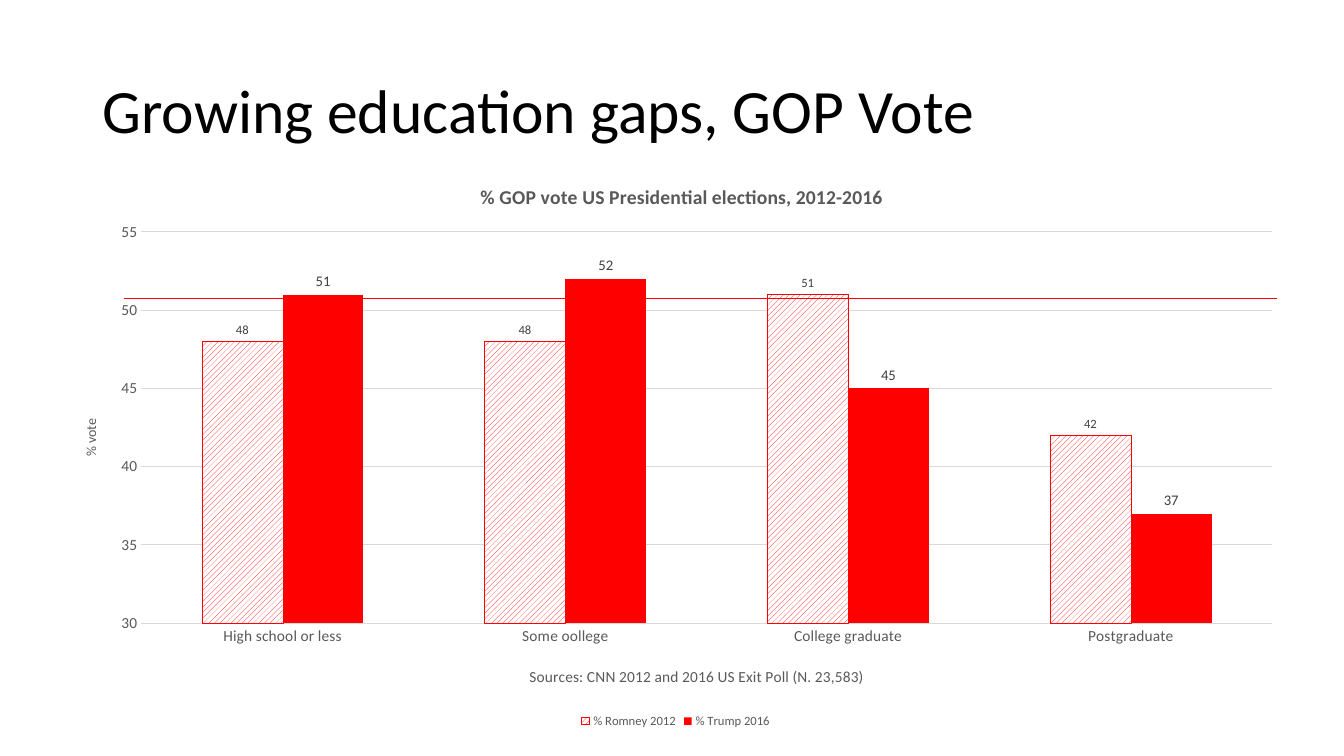
from lxml.etree import SubElement
from pptx import Presentation
from pptx.chart.data import CategoryChartData as Data
from pptx.dml.color import RGBColor as Rgb
from pptx.enum.chart import XL_CHART_TYPE as Kind, XL_LABEL_POSITION as Spot
from pptx.enum.chart import XL_LEGEND_POSITION as Side, XL_TICK_MARK as Tick
from pptx.enum.dml import MSO_PATTERN as Hatch
from pptx.enum.shapes import MSO_CONNECTOR as Link
from pptx.enum.text import MSO_ANCHOR as Anchor, PP_ALIGN as Align
from pptx.oxml import parse_xml
from pptx.oxml.ns import nsdecls, qn
from pptx.util import Cm, Pt

HUES = {"black": "000000", "white": "FFFFFF", "red": "FF0000",
        "gray": "595959", "label": "404040", "grid": "D9D9D9"}
FACE = "Calibri"
LEVELS = ["High school or less", "Some oollege", "College graduate", "Postgraduate"]
VOTES = {"% Romney 2012": (48, 48, 51, 42), "% Trump 2016": (51, 52, 45, 37)}


def hue(name):
    return Rgb.from_string(HUES[name])


def apply(item, values):
    for key, value in values.items():
        setattr(item, key, value)


class Page:
    def __init__(self, deck):
        self.slide = deck.slides.add_slide(deck.slide_layouts[5])

    def font(self, font, size, color="gray", bold=False):
        apply(font, {"name": FACE, "size": Pt(size), "bold": bold})
        font.color.rgb = hue(color)

    def line(self, line, color, width):
        line.color.rgb = hue(color)
        line.width = Pt(width)

    def title(self, text, box):
        shape = self.slide.shapes.title
        apply(shape, dict(zip(("left", "top", "width", "height"), map(Cm, box))))
        frame = shape.text_frame
        frame.text = text
        apply(frame, {"vertical_anchor": Anchor.MIDDLE, "word_wrap": True})
        para = frame.paragraphs[0]
        apply(para, {"alignment": Align.LEFT, "line_spacing": 0.9})
        self.font(para.runs[0].font, 44, "black")

    def place(self, node, **spots):
        """Give a chart part a fixed place, in fractions of the chart."""
        inner = "<c:layoutTarget val='inner'/>" if "w" in spots else ""
        modes = "".join(f"<c:{k}Mode val='edge'/>" for k in "xy")
        sizes = "".join(f"<c:{k} val='{v}'/>" for k, v in spots.items())
        old = node.find(qn("c:layout"))
        if old is not None:
            node.remove(old)
        at = 0 if node.find(qn("c:tx")) is None else 1
        node.insert(at, parse_xml(
            f"<c:layout {nsdecls('c')}><c:manualLayout>{inner}{modes}{sizes}"
            "</c:manualLayout></c:layout>"))

    def head(self, head, text, size, x, y, bold=False, turn=0):
        frame = head.text_frame
        frame.text = text
        self.font(frame.paragraphs[0].runs[0].font, size, bold=bold)
        body = next(head.element.iter(qn("a:bodyPr")))
        body.set("rot", str(turn * 60000))
        self.place(head.element, x=x, y=y)

    def chart(self, levels, votes, box):
        data = Data(number_format="General")
        data.categories = levels
        for name, values in votes.items():
            data.add_series(name, values)
        chart = self.slide.shapes.add_chart(
            Kind.COLUMN_CLUSTERED, *map(Cm, box), data).chart
        self.font(chart.font, 10, "black")
        plot = chart.plots[0]
        apply(plot, {"gap_width": 150, "overlap": 0, "vary_by_categories": False})
        self.place(chart.element.find(".//" + qn("c:plotArea")),
                   x=0.07, y=0.13, w=0.91, h=0.68)
        chart.has_legend = True
        apply(chart.legend, {"position": Side.BOTTOM, "include_in_layout": False})
        self.font(chart.legend.font, 9)
        return chart

    def axis(self, axis, **values):
        apply(axis, {"major_tick_mark": Tick.NONE, "minor_tick_mark": Tick.NONE, **values})
        self.font(axis.tick_labels.font, 11)

    def labels(self, series, size):
        marks = series.data_labels
        apply(marks, {"show_value": True, "position": Spot.OUTSIDE_END})
        self.font(marks.font, size, "label")

    def rule(self, ends, color, width):
        rule = self.slide.shapes.add_connector(Link.STRAIGHT, *map(Cm, ends))
        self.line(rule.line, color, width)
        SubElement(rule.element.spPr, qn("a:effectLst"))


def main():
    deck = Presentation()
    apply(deck, {"slide_width": Cm(33.87), "slide_height": Cm(19.05)})
    page = Page(deck)

    # Title and chart
    page.title("Growing education gaps, GOP Vote", (2.33, 1.01, 29.21, 3.68))
    chart = page.chart(LEVELS, VOTES, (1.37, 3.96, 31.32, 14.5))
    page.head(chart.chart_title, "% GOP vote US Presidential elections, 2012-2016",
              14, 0.34, 0.04, bold=True)

    # Axes
    base, scale = chart.category_axis, chart.value_axis
    page.axis(base)
    page.line(base.format.line, "grid", 0.75)
    page.head(base.axis_title, "Sources: CNN 2012 and 2016 US Exit Poll (N. 23,583)",
              11, 0.38, 0.88)
    page.axis(scale, minimum_scale=30, maximum_scale=55, major_unit=5)
    scale.format.line.fill.background()
    page.line(scale.major_gridlines.format.line, "grid", 0.75)
    page.head(scale.axis_title, "% vote", 10, 0.02, 0.45, turn=-90)

    # Columns
    first, last = chart.plots[0].series
    fill = first.format.fill
    fill.patterned()
    fill.pattern = Hatch.WIDE_UPWARD_DIAGONAL
    fill.fore_color.rgb, fill.back_color.rgb = hue("red"), hue("white")
    page.line(first.format.line, "red", 0.25)
    last.format.fill.solid()
    last.format.fill.fore_color.rgb = hue("red")
    for series, size in ((first, 9), (last, 10.5)):
        series.invert_if_negative = False
        page.labels(series, size)

    # Red line across the columns
    page.rule((3.12, 7.52, 32.18, 7.52), "red", 1)
    deck.save("out.pptx")


if __name__ == "__main__":
    main()
